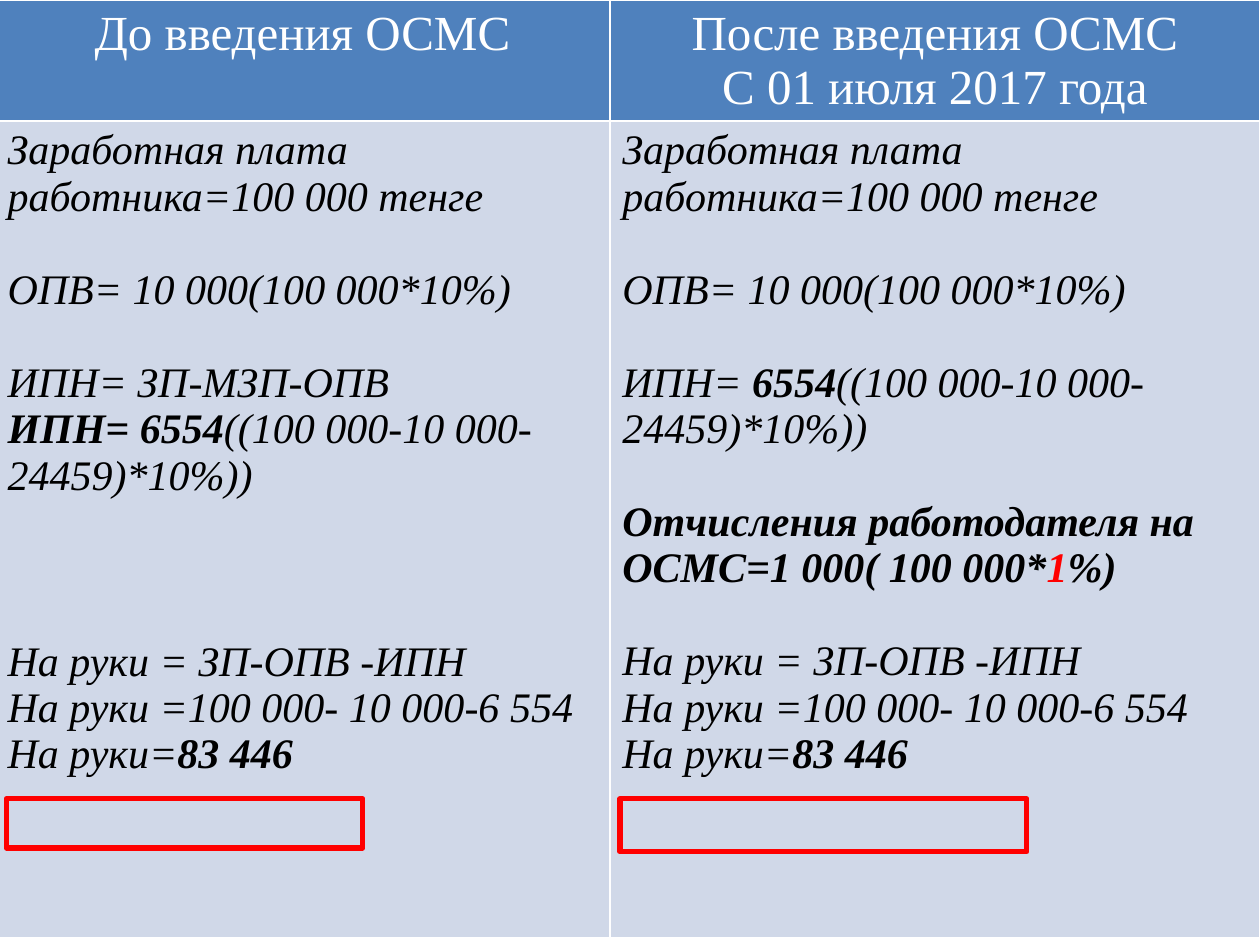
"""Build a slide that compares take-home pay before and after the insurance reform."""
from dataclasses import dataclass

from lxml.etree import SubElement
from pptx import Presentation
from pptx.dml.color import RGBColor
from pptx.enum.shapes import MSO_SHAPE
from pptx.enum.text import PP_ALIGN
from pptx.oxml.ns import qn
from pptx.util import Inches, Pt


@dataclass(frozen=True)
class Theme:
    font: str = "Times New Roman"
    head_size: float = 28
    body_size: float = 24
    line_gap: float = 26.6
    head: str = "4F81BD"
    body: str = "D0D8E8"
    white: str = "FFFFFF"
    black: str = "000000"
    red: str = "FF0000"


THEME = Theme()
COLS = (4.88, 5.16)
ROWS = (0.96, 6.48)

HEADS = (
    ["До введения ОСМС"],
    ["После введения ОСМС", "С 01 июля 2017 года"],
)

WAGE = [
    (0, [("Заработная плата работника=100 000 тенге", False)]),
    (1, [("ОПВ= 10 000(100 000*10%)", False)]),
]
TAX = ("((100 000-10 000-24459)*10%))", False)


def net_pay(gap):
    return [
        (gap, [("На руки = ЗП-ОПВ -ИПН", False)]),
        (0, [("На руки =100 000- 10 000-6 554", False)]),
        (0, [("На руки=", False), ("83 446", True)]),
    ]


BEFORE = WAGE + [
    (1, [("ИПН= ЗП-МЗП-ОПВ", False)]),
    (0, [("ИПН= 6554", True), TAX]),
] + net_pay(3)

AFTER = WAGE + [
    (1, [("ИПН= ", False), ("6554", True), TAX]),
    (1, [
        ("Отчисления работодателя на ОСМС=1 000( 100 000*", True),
        ("1", True, THEME.red),
        ("%)", True),
    ]),
] + net_pay(1)

FRAMES = ((4.92, 6.34, 3.23, 0.42), (0.05, 6.34, 2.83, 0.39))


def add_run(para, text, size, color, bold=False, slant=False):
    run = para.add_run()
    run.text = text
    font = run.font
    font.name, font.size = THEME.font, Pt(size)
    font.bold, font.italic = bold, slant
    font.color.rgb = RGBColor.from_string(color)


def next_para(frame, index):
    return frame.add_paragraph() if index else frame.paragraphs[0]


def set_edges(cell):
    props = cell._tc.get_or_add_tcPr()
    for index, side in enumerate(("lnL", "lnR", "lnT", "lnB")):
        edge = props.makeelement(qn(f"a:{side}"), {"w": str(Pt(1))})
        fill = SubElement(edge, qn("a:solidFill"))
        SubElement(fill, qn("a:srgbClr"), val=THEME.white)
        props.insert(index, edge)


def style_cell(cell, color):
    cell.fill.solid()
    cell.fill.fore_color.rgb = RGBColor.from_string(color)
    set_edges(cell)


def fill_head(cell, lines):
    style_cell(cell, THEME.head)
    for index, line in enumerate(lines):
        para = next_para(cell.text_frame, index)
        para.alignment = PP_ALIGN.CENTER
        add_run(para, line, THEME.head_size, THEME.white)


def fill_body(cell, lines):
    style_cell(cell, THEME.body)
    for index, (gap, runs) in enumerate(lines):
        para = next_para(cell.text_frame, index)
        para.space_before = Pt(gap * THEME.line_gap)
        for text, bold, *tint in runs:
            color = tint[0] if tint else THEME.black
            add_run(para, text, THEME.body_size, color, bold, True)


def add_grid(slide):
    grid = slide.shapes.add_table(
        len(ROWS), len(COLS), Inches(-0.04), Inches(0),
        Inches(sum(COLS)), Inches(sum(ROWS)),
    ).table
    for col, width in zip(grid.columns, COLS):
        col.width = Inches(width)
    for row, height in zip(grid.rows, ROWS):
        row.height = Inches(height)
    for index, (head, body) in enumerate(zip(HEADS, (BEFORE, AFTER))):
        fill_head(grid.cell(0, index), head)
        fill_body(grid.cell(1, index), body)


def add_frame(slide, box):
    frame = slide.shapes.add_shape(MSO_SHAPE.RECTANGLE, *map(Inches, box))
    frame.shadow.inherit = False
    frame.fill.background()
    frame.line.color.rgb = RGBColor.from_string(THEME.red)
    frame.line.width = Pt(3)


def main():
    deck = Presentation()
    deck.slide_width, deck.slide_height = Inches(10), Inches(7.5)
    slide = deck.slides.add_slide(deck.slide_layouts[6])
    add_grid(slide)
    for box in FRAMES:
        add_frame(slide, box)
    deck.save("out.pptx")


if __name__ == "__main__":
    main()
